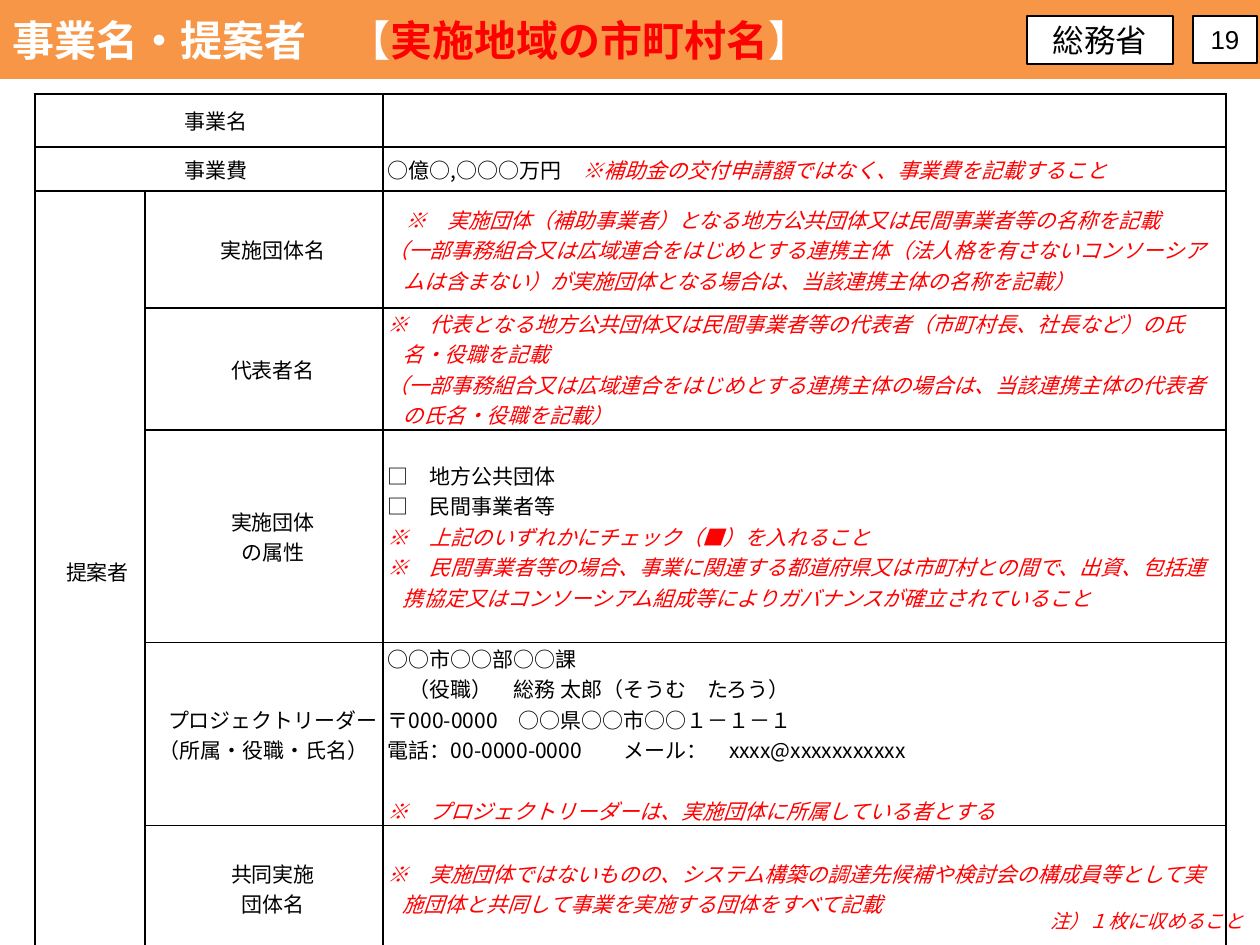
from dataclasses import dataclass

from lxml import etree
from pptx import Presentation, util as u
from pptx.dml.color import RGBColor
from pptx.enum import shapes, text
from pptx.oxml import ns

SCALE = 914400 / 126
CENTER = text.PP_ALIGN.CENTER
RIGHT = text.PP_ALIGN.RIGHT


@dataclass(frozen=True)
class Theme:
    orange: str = "F79646"
    white: str = "FFFFFF"
    black: str = "000000"
    red: str = "FF0000"
    font: str = "Noto Sans CJK JP"
    latin: str = "Arial"
    title: float = 24
    ministry: float = 18
    page: float = 14.8
    body: float = 12
    footnote: float = 11
    line: float = 1
    thin: float = 0.75
    gap: float = 17.4


T = Theme()


@dataclass
class Run:
    text: str
    size: float = T.body
    color: str = T.black
    font: str = T.font
    bold: bool = False
    italic: bool = False


@dataclass
class Para:
    runs: list
    left: int = 0
    indent: int = 0
    align: int = text.PP_ALIGN.LEFT
    before: float = 0


def px(n):
    return u.Emu(round(n * SCALE))


def rgb(value):
    return RGBColor.from_string(value)


def plain(words, hang=0):
    return Para([Run(words)], hang, -hang)


def red(words, size=T.body):
    return Run(words, size, T.red, italic=True)


def note(words, hang=15, before=0):
    return Para([red(words)], hang, -hang, before=before)


def label(*lines, indent=18):
    return [Para([Run(line)], 0, indent, CENTER) for line in lines]


class Slide:
    def __init__(self, prs, theme):
        self.theme = theme
        self.s = prs.slides.add_slide(prs.slide_layouts[6])

    def add_text(self, tf, paras):
        for i, para in enumerate(paras):
            p = tf.add_paragraph() if i else tf.paragraphs[0]
            p.alignment = para.align
            p.space_before = u.Pt(para.before)
            pPr = p._p.get_or_add_pPr()
            pPr.set("marL", str(px(para.left)))
            pPr.set("indent", str(px(para.indent)))
            for run in para.runs:
                r = p.add_run()
                r.text = run.text
                f = r.font
                f.size, f.name = u.Pt(run.size), run.font
                f.bold, f.italic = run.bold, run.italic
                f.color.rgb = rgb(run.color)
                ea = etree.SubElement(r._r.get_or_add_rPr(), ns.qn("a:ea"))
                ea.set("typeface", run.font)

    def box(self, x, y, w, h, fill, para, line=None):
        sp = self.s.shapes.add_shape(shapes.MSO_SHAPE.RECTANGLE, px(x), px(y), px(w), px(h))
        sp.shadow.inherit = False
        sp.fill.solid()
        sp.fill.fore_color.rgb = rgb(fill)
        if line:
            sp.line.color.rgb = rgb(self.theme.black)
            sp.line.width = u.Pt(line)
        else:
            sp.line.fill.background()
        tf = sp.text_frame
        tf.vertical_anchor = text.MSO_ANCHOR.MIDDLE
        self.add_text(tf, [para])

    def label(self, x, y, w, h, para):
        tf = self.s.shapes.add_textbox(px(x), px(y), px(w), px(h)).text_frame
        tf.word_wrap = True
        tf.auto_size = text.MSO_AUTO_SIZE.SHAPE_TO_FIT_TEXT
        self.add_text(tf, [para])

    def borders(self, cell):
        tcPr = cell._tc.get_or_add_tcPr()
        for i, side in enumerate(("lnL", "lnR", "lnT", "lnB")):
            ln = etree.Element(ns.qn(f"a:{side}"), w=str(u.Pt(self.theme.line)))
            fill = etree.SubElement(ln, ns.qn("a:solidFill"))
            etree.SubElement(fill, ns.qn("a:srgbClr"), val=self.theme.black)
            tcPr.insert(i, ln)

    def table(self, x, y, cols, rows, merges, content):
        tbl = self.s.shapes.add_table(
            len(rows), len(cols), px(x), px(y), px(sum(cols)), px(sum(rows))).table
        tbl.first_row = tbl.horz_banding = False
        for col, w in zip(tbl.columns, cols):
            col.width = px(w)
        for row, h in zip(tbl.rows, rows):
            row.height = px(h)
        for first, last in merges:
            tbl.cell(*first).merge(tbl.cell(*last))
        for r in range(len(rows)):
            for c in range(len(cols)):
                cell = tbl.cell(r, c)
                cell.fill.background()
                self.borders(cell)
                cell.vertical_anchor = text.MSO_ANCHOR.MIDDLE
                side, edge = (5, 0) if c == len(cols) - 1 else (3, 3)
                cell.margin_left = cell.margin_right = px(side)
                cell.margin_top = cell.margin_bottom = px(edge)
                self.add_text(cell.text_frame, content.get((r, c), []))


CONTENT = {
    (0, 0): label("事業名", indent=15),
    (1, 0): label("事業費", indent=15),
    (1, 2): [Para([Run("○億○,○○○万円　"),
                   red("※補助金の交付申請額ではなく、事業費を記載すること")], 16, -16)],
    (2, 0): label("提案者", indent=15),
    (2, 1): label("実施団体名"),
    (2, 2): [
        Para([red("※　実施団体（補助事業者）となる地方公共団体又は民間事業者等の名称を記載")], 0, 18),
        note("（一部事務組合又は広域連合をはじめとする連携主体（法人格を有さないコンソーシアムは含まない）"
             "が実施団体となる場合は、当該連携主体の名称を記載）", 16)],
    (3, 1): label("代表者名"),
    (3, 2): [
        note("※　代表となる地方公共団体又は民間事業者等の代表者（市町村長、社長など）の氏名・役職を記載"),
        note("（一部事務組合又は広域連合をはじめとする連携主体の場合は、当該連携主体の代表者の氏名・役職を記載）")],
    (4, 1): label("実施団体", "の属性"),
    (4, 2): [
        plain("□　地方公共団体", 32),
        plain("□　民間事業者等", 32),
        note("※　上記のいずれかにチェック（■）を入れること", 32),
        note("※　民間事業者等の場合、事業に関連する都道府県又は市町村との間で、出資、"
             "包括連携協定又はコンソーシアム組成等によりガバナンスが確立されていること")],
    (5, 1): label("プロジェクトリーダー") + [Para([Run("（所属・役職・氏名）")], 15, -15, CENTER)],
    (5, 2): [
        plain("○○市○○部○○課"),
        plain("　（役職）　総務 太郎（そうむ　たろう）"),
        plain("〒000-0000　○○県○○市○○１－１－１"),
        plain("電話：00-0000-0000　　メール：　xxxx@xxxxxxxxxxx"),
        note("※　プロジェクトリーダーは、実施団体に所属している者とする", before=T.gap)],
    (6, 1): label("共同実施", "団体名"),
    (6, 2): [note("※　実施団体ではないものの、システム構築の調達先候補や検討会の構成員等として"
                  "実施団体と共同して事業を実施する団体をすべて記載")],
}


def main():
    prs = Presentation()
    prs.slide_width, prs.slide_height = px(1260), px(945)
    s = Slide(prs, T)
    title = [Run(words, T.title, color, bold=True) for words, color in (
        ("事業名・提案者　【", T.white), ("実施地域の市町村名", T.red), ("】", T.white))]
    s.box(0, 0, 1260, 79, T.orange, Para(title))
    s.box(1027, 16, 146, 48, T.white,
          Para([Run("総務省", T.ministry, font=T.latin)], align=CENTER), T.line)
    s.table(35, 94, [110, 238, 843], [53, 44, 117, 97, 213, 86, 126],
            [((0, 0), (0, 1)), ((1, 0), (1, 1)), ((2, 0), (6, 0))], CONTENT)
    s.label(784, 903, 472, 37, Para([red("注）１枚に収めること", T.footnote)], align=RIGHT))
    s.box(1193, 16, 64, 47, T.white,
          Para([Run("19", T.page, font=T.latin)], align=CENTER), T.thin)
    prs.save("out.pptx")


if __name__ == "__main__":
    main()
